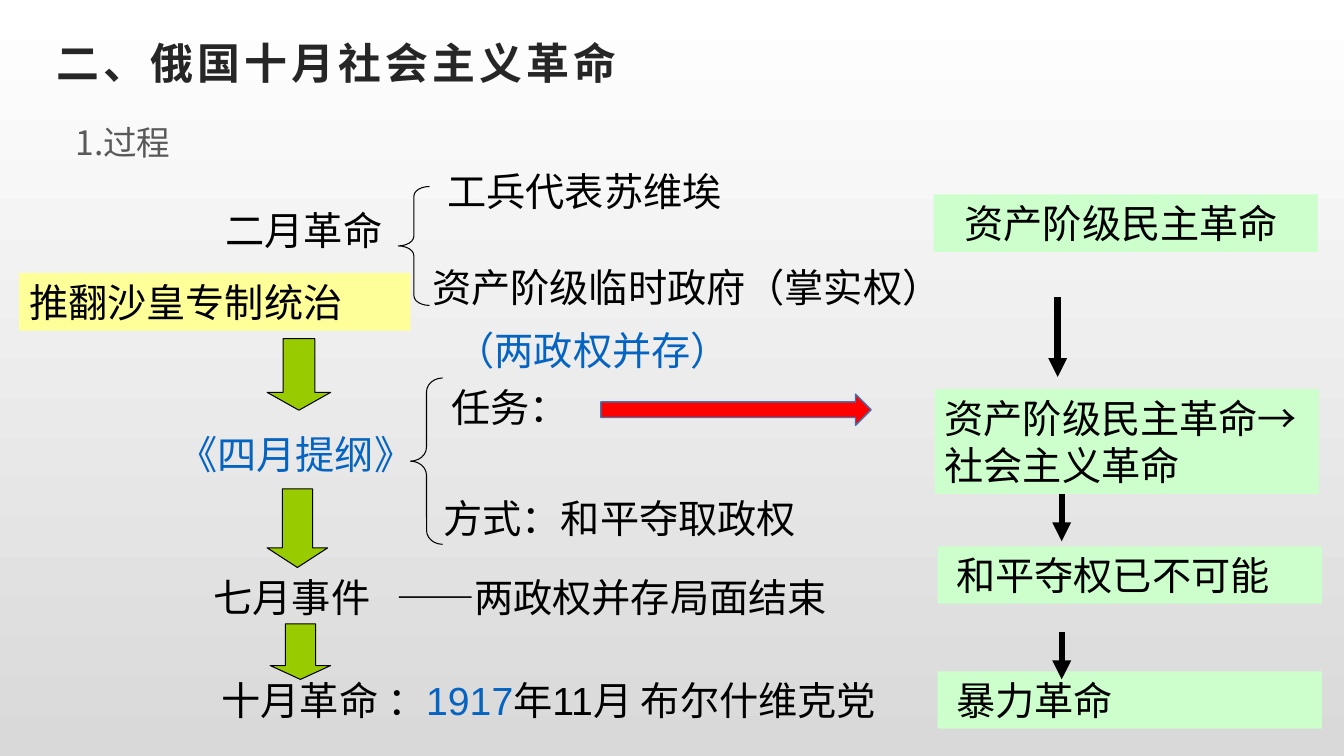
"""Build a slide on the course of the October Revolution in Russia."""
from lxml import etree
from pptx import Presentation
from pptx.dml.color import RGBColor
from pptx.enum.shapes import MSO_CONNECTOR, MSO_SHAPE
from pptx.enum.text import MSO_ANCHOR, PP_ALIGN
from pptx.oxml.ns import qn
from pptx.util import Inches, Pt

RECTANGLE = MSO_SHAPE.RECTANGLE
BRACE = MSO_SHAPE.LEFT_BRACE
DOWN_ARROW = MSO_SHAPE.DOWN_ARROW
RIGHT_ARROW = MSO_SHAPE.RIGHT_ARROW
STRAIGHT = MSO_CONNECTOR.STRAIGHT
TOP, MIDDLE = MSO_ANCHOR.TOP, MSO_ANCHOR.MIDDLE
LEFT, CENTER = PP_ALIGN.LEFT, PP_ALIGN.CENTER
LATIN, CHINESE = "Arial", "Noto Sans CJK SC"
ROW = 0.57
COLORS = {
    "black": "000000", "title": "262626", "subtitle": "595959", "blue": "0563C1",
    "yellow": "FFFF99", "mint": "CCFFCC", "green": "99CC00", "red": "FF0000",
    "red_edge": "476FAA", "sky": "FFFFFF", "ground": "D9D9D9",
}


def color(name):
    """Return the named colour."""
    return RGBColor.from_string(COLORS[name])


def write(holder, text, size=28, ink="black", font=LATIN, bold=False, spacing=0,
          anchor=TOP, align=LEFT):
    """Write a string, or (string, colour) pairs, into a shape."""
    frame = holder.text_frame
    frame.word_wrap = True
    frame.vertical_anchor = anchor
    para = frame.paragraphs[0]
    para.alignment = align
    for words, shade in [(text, ink)] if isinstance(text, str) else text:
        span = para.add_run()
        span.text = words
        span.font.size = Pt(size)
        span.font.bold = bold
        span.font.name = font
        span.font.color.rgb = color(shade)
        props = span.font._element
        etree.SubElement(props, qn("a:ea")).set("typeface", CHINESE)
        if spacing:
            props.set("spc", str(spacing * 100))


def add_text(page, left, top, width, text, height=ROW, **style):
    """Add a text box."""
    holder = page.shapes.add_textbox(*map(Inches, (left, top, width, height)))
    write(holder, text, **style)


def add_figure(page, kind, box, fill=None, edge=None, weight=0.75, adjust=()):
    """Add a preset shape with plain fill and outline."""
    figure = page.shapes.add_shape(kind, *map(Inches, box))
    figure.shadow.inherit = False
    for index, value in enumerate(adjust):
        figure.adjustments[index] = value
    if fill:
        figure.fill.solid()
        figure.fill.fore_color.rgb = color(fill)
    else:
        figure.fill.background()
    if edge:
        figure.line.color.rgb = color(edge)
        figure.line.width = Pt(weight)
    else:
        figure.line.fill.background()
    return figure


def add_arrow(page, x, top, length):
    """Add a thick black arrow that points down."""
    arrow = page.shapes.add_connector(
        STRAIGHT, *map(Inches, (x, top, x, top + length)))
    arrow.line.color.rgb = color("black")
    arrow.line.width = Pt(4.5)
    etree.SubElement(arrow.line._get_or_add_ln(), qn("a:tailEnd")).set("type", "triangle")
    etree.SubElement(arrow._element.spPr, qn("a:effectLst"))


def paint_background(page):
    """Shade the page from white at the top to grey at the bottom."""
    fill = page.background.fill
    fill.gradient()
    fill.gradient_angle = 270
    for stop, name in zip(fill.gradient_stops, ("sky", "ground")):
        stop.color.rgb = color(name)


def add_heading(page, box):
    """Place the title and the subtitle."""
    left, top, width, height = box
    add_text(page, left, top, width, "二、俄国十月社会主义革命", height=0.68,
             size=30.6, ink="title", bold=True, spacing=3, anchor=MIDDLE)
    add_text(page, left + 0.19, top + height - 0.5, 4.16, "1.过程", height=0.5,
             size=24, ink="subtitle", font=CHINESE, anchor=MIDDLE)


def add_timeline(page, box):
    """Place the events and the green arrows between them."""
    left, top, width, height = box
    october = [("十月革命 ：", "black"), ("1917", "blue"), ("年11月 布尔什维克党", "black")]
    for x, y, span, text, ink in (
            (1.95, 0, 2.76, "二月革命", "black"),
            (1.48, 2.22, 2.6, "《四月提纲》", "blue"),
            (1.83, 3.64, 5.67, "七月事件", "black"),
            (1.91, height - ROW, 7.17, october, "black")):
        add_text(page, left + x, top + y, span, text, ink=ink)
    for x, y, span, drop, head in (
            (2.46, 1.36, 0.63, 0.71, 0.281),
            (2.46, 2.85, 0.6, 0.78, 0.324),
            (2.49, 4.19, 0.6, 0.55, 0.25)):
        add_figure(page, DOWN_ARROW, (left + x, top + y, span, drop),
                   fill="green", edge="black", adjust=(0.5, head))
    label = add_figure(page, RECTANGLE, (left, top + 0.71, width, ROW), fill="yellow")
    write(label, "推翻沙皇专制统治")


def add_details(page, box):
    """Place the braces and the details of each event."""
    left, top, width, height = box
    for x, y, span, drop, curve in (
            (0.12, 0.24, 0.31, 1.18, 0.313), (0.24, 2.14, 0.32, 1.65, 0.435)):
        add_figure(page, BRACE, (left + x, top + y, span, drop),
                   edge="black", adjust=(curve, 0.5))
    for x, y, span, text, ink in (
            (0.51, 0, 3.46, "工兵代表苏维埃", "black"),
            (0.36, 0.95, 5.36, "资产阶级临时政府（掌实权）", "black"),
            (0.59, 1.58, 2.99, "（两政权并存）", "blue"),
            (0.55, 2.14, 4.49, "任务：", "black"),
            (0.47, 3.24, 4.33, "方式：和平夺取政权", "black"),
            (0, height - ROW, width, "——两政权并存局面结束", "black")):
        add_text(page, left + x, top + y, span, text, ink=ink)
    add_figure(page, RIGHT_ARROW, (left + 2.13, top + 2.3, 2.68, 0.31),
               fill="red", edge="red_edge", weight=1)


def add_stages(page, box):
    """Place the green stage labels and the black arrows between them."""
    left, top, width, height = box
    for x, y, drop, text, anchor, align in (
            (0, 0, ROW, "资产阶级民主革命 ", TOP, CENTER),
            (0.01, 1.93, 1.04, "资产阶级民主革命→社会主义革命", TOP, LEFT),
            (0.04, 3.49, ROW, " 和平夺权已不可能", TOP, LEFT),
            (0.04, height - ROW, ROW, " 暴力革命", MIDDLE, LEFT)):
        label = add_figure(page, RECTANGLE, (left + x, top + y, width, drop), fill="mint")
        write(label, text, anchor=anchor, align=align)
    for x, y, length in ((1.23, 1.02, 0.79), (1.27, 2.97, 0.47), (1.27, 4.34, 0.47)):
        add_arrow(page, left + x, top + y, length)


def main():
    """Build and save the deck."""
    deck = Presentation()
    deck.slide_width, deck.slide_height = Inches(13.33), Inches(7.5)
    page = deck.slides.add_slide(deck.slide_layouts[6])
    paint_background(page)
    add_heading(page, (0.46, 0.28, 9.57, 1.38))
    add_timeline(page, (0.19, 2, 3.88, 5.23))
    add_details(page, (3.83, 1.61, 5.43, 4.6))
    add_stages(page, (9.26, 1.93, 3.81, 5.3))
    deck.save("out.pptx")


if __name__ == "__main__":
    main()
